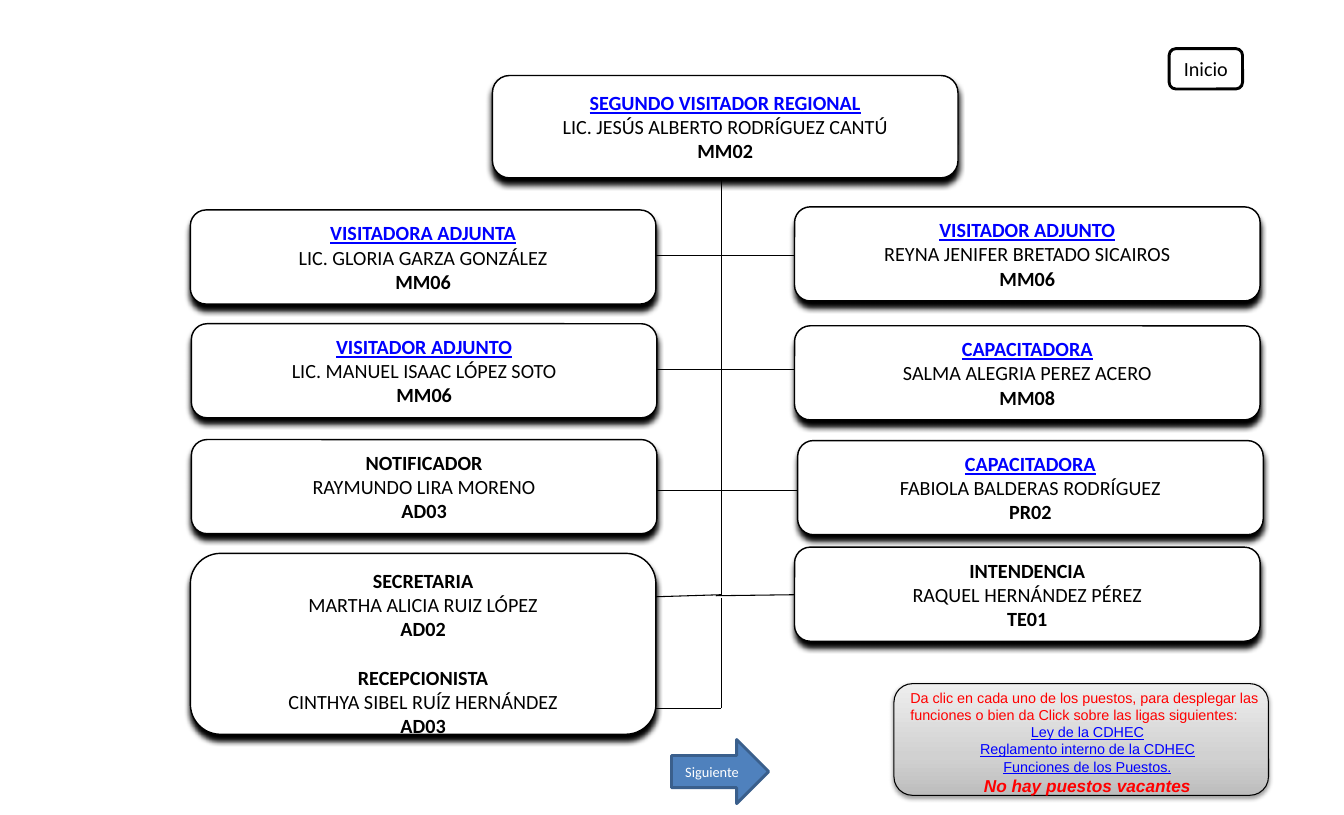
"""Builds the organisation chart slide of a regional office."""
from copy import deepcopy
from lxml.etree import SubElement
from pptx import Presentation
from pptx.dml.color import RGBColor
from pptx.enum.shapes import MSO_CONNECTOR, MSO_SHAPE as Shape
from pptx.enum.text import MSO_ANCHOR as Anchor, MSO_AUTO_SIZE as AutoSize, PP_ALIGN as Align
from pptx.oxml.ns import qn
from pptx.util import Inches, Pt

COLORS = {"black": "000000", "white": "FFFFFF", "link": "0000FF", "red": "FF0000",
          "arrow": "4F81BD", "arrow_edge": "3A5F8C"}
NOTE_STOPS = [(0, "BDBDBD"), (0.35, "D1D1D1"), (1, "EEEEEE")]
COLUMNS = {"left": 1.84, "right": 7.68}
FIRST_ROW, ROW_PITCH = 2.03, 1.11
CARD_WIDTH, CARD_HEIGHT = 4.5, 0.91
TRUNK_X = 6.97
CARD_CORNER = 0.167

HEAD = ("SEGUNDO VISITADOR REGIONAL", "LIC. JESÚS ALBERTO RODRÍGUEZ CANTÚ", "MM02", "link")
POSTS = [
    ("left", 0, 0, 0, ("VISITADORA ADJUNTA", "LIC. GLORIA GARZA GONZÁLEZ", "MM06", "link")),
    ("left", 1, 0.01, -0.01, ("VISITADOR ADJUNTO", "LIC. MANUEL ISAAC LÓPEZ SOTO", "MM06", "link")),
    ("left", 2, 0.01, 0, ("NOTIFICADOR", "RAYMUNDO LIRA MORENO", "AD03", "black")),
    ("right", 0, 0, -0.03, ("VISITADOR ADJUNTO", "REYNA JENIFER BRETADO SICAIROS", "MM06", "link")),
    ("right", 1, 0, 0.01, ("CAPACITADORA", "SALMA ALEGRIA PEREZ ACERO", "MM08", "link")),
    ("right", 2, 0.03, 0.01, ("CAPACITADORA", "FABIOLA BALDERAS RODRÍGUEZ", "PR02", "link")),
    ("right", 3, 0, -0.07, ("INTENDENCIA", "RAQUEL HERNÁNDEZ PÉREZ", "TE01", "black")),
]
OFFICE = [("SECRETARIA", "MARTHA ALICIA RUIZ LÓPEZ", "AD02", "black"),
          ("RECEPCIONISTA", "CINTHYA SIBEL RUÍZ HERNÁNDEZ", "AD03", "black")]
BRANCHES = [(6.02, 2.47, 8.09, 2.47), (6.02, 3.57, 8.09, 3.57), (6.02, 4.74, 8.09, 4.74),
            (6.02, 5.78, TRUNK_X, 5.75), (6.92, 5.76, 7.68, 5.75), (TRUNK_X, 6.85, 5.63, 6.85)]
TRUNK = [(TRUNK_X, 1.08, TRUNK_X, 5.76), (TRUNK_X, 5.78, TRUNK_X, 6.85)]
NOTE = ("Da clic en cada uno de los puestos, para desplegar las funciones "
        "o bien da Click sobre las ligas siguientes:")
NOTE_LINKS = ["Ley de la CDHEC", "Reglamento interno de la CDHEC", "Funciones de los Puestos."]


def rgb(name):
    """Return the named colour."""
    return RGBColor.from_string(COLORS[name])


def add_line(slide, x1, y1, x2, y2):
    """Draw a thin black line without a shadow."""
    line = slide.shapes.add_connector(MSO_CONNECTOR.STRAIGHT, *map(Inches, (x1, y1, x2, y2)))
    line.line.color.rgb = rgb("black")
    line.line.width = Pt(0.75)
    SubElement(line._element.spPr, qn("a:effectLst"))


def add_panel(slide, kind, box, fill, edge, width):
    """Add a filled and outlined shape without a shadow."""
    panel = slide.shapes.add_shape(kind, *map(Inches, box))
    panel.shadow.inherit = False
    panel.fill.solid()
    panel.fill.fore_color.rgb = rgb(fill)
    panel.line.color.rgb = rgb(edge)
    panel.line.width = Pt(width)
    return panel


def add_shadow(panel, alpha, blur, distance):
    """Cast a black shadow straight down."""
    effects = panel._element.spPr.find(qn("a:effectLst"))
    shadow = SubElement(effects, qn("a:outerShdw"), blurRad=str(Pt(blur)),
                        dist=str(Pt(distance)), dir="5400000", rotWithShape="0")
    black = SubElement(shadow, qn("a:srgbClr"), val=COLORS["black"])
    SubElement(black, qn("a:alpha"), val=str(alpha * 1000))


def add_text(frame, text, size, color, font="Calibri", align=Align.CENTER, bold=False,
             italic=False, underline=False):
    """Append one paragraph holding a single run."""
    first = frame.paragraphs[0]
    paragraph = frame.add_paragraph() if first.runs else first
    paragraph.alignment = align
    run = paragraph.add_run()
    run.text = text
    style = run.font
    style.name, style.size, style.color.rgb = font, Pt(size), rgb(color)
    style.bold, style.italic, style.underline = bold, italic, underline
    return paragraph


def add_card(slide, box, posts, anchor=Anchor.MIDDLE, top_inset=0.09):
    """Add a card listing the title, holder and code of each post."""
    card = add_panel(slide, Shape.ROUNDED_RECTANGLE, box, "white", "black", 1)
    card.adjustments[0] = CARD_CORNER
    add_shadow(card, 100, 4, 4)
    frame = card.text_frame
    frame.word_wrap = False
    frame.vertical_anchor = anchor
    frame.margin_left = frame.margin_right = Inches(0.17)
    frame.margin_top, frame.margin_bottom = Inches(top_inset), Inches(0.09)
    for index, (title, holder, code, color) in enumerate(posts):
        heading = add_text(frame, title, 14, color, bold=True, underline=color == "link")
        heading.space_before = Pt(17 if index else 0)
        add_text(frame, holder, 14, "black")
        add_text(frame, code, 14, "black", bold=True)


def add_button(slide, kind, box, label, size, colors, width):
    """Add a navigation button with a centred label."""
    fill, edge, ink = colors
    button = add_panel(slide, kind, box, fill, edge, width)
    button.text_frame.vertical_anchor = Anchor.MIDDLE
    add_text(button.text_frame, label, size, ink)


def add_note(slide):
    """Add the shaded help panel and its text."""
    panel = add_panel(slide, Shape.ROUNDED_RECTANGLE, (8.64, 6.61, 3.62, 1.08),
                      "white", "black", 0.75)
    add_shadow(panel, 38, 3.1, 1.6)
    panel.fill.gradient()
    panel.fill.gradient_angle = 90
    stop_list = panel._element.spPr.find(qn("a:gradFill")).find(qn("a:gsLst"))
    stop_list.append(deepcopy(stop_list[0]))
    for stop, (position, shade) in zip(panel.fill.gradient_stops, NOTE_STOPS):
        stop.position = position
        stop.color.rgb = RGBColor.from_string(shade)

    note = slide.shapes.add_textbox(*map(Inches, (8.7, 6.61, 3.62, 1.14)))
    frame = note.text_frame
    frame.word_wrap = True
    frame.auto_size = AutoSize.SHAPE_TO_FIT_TEXT
    add_text(frame, NOTE, 10, "red", "Arial", Align.LEFT)
    for link in NOTE_LINKS:
        add_text(frame, link, 10, "link", "Arial", underline=True)
    add_text(frame, "No hay puestos vacantes", 12, "red", "Arial", bold=True, italic=True)


def main():
    """Build the slide and save it."""
    deck = Presentation()
    deck.slide_width, deck.slide_height = Inches(12.99), Inches(7.88)
    slide = deck.slides.add_slide(deck.slide_layouts[6])
    for ends in TRUNK + BRANCHES:
        add_line(slide, *ends)
    add_card(slide, (4.76, 0.73, CARD_WIDTH, 0.99), [HEAD])
    for column, row, dx, dy, post in POSTS:
        left, top = COLUMNS[column] + dx, FIRST_ROW + row * ROW_PITCH + dy
        add_card(slide, (left, top, CARD_WIDTH, CARD_HEIGHT), [post])
    add_card(slide, (COLUMNS["left"], 5.35, CARD_WIDTH, 1.75), OFFICE, Anchor.TOP, 0.06)
    add_button(slide, Shape.ROUNDED_RECTANGLE, (11.3, 0.47, 0.71, 0.39), "Inicio", 14,
               ("white", "black", "black"), 2)
    add_note(slide)
    add_button(slide, Shape.RIGHT_ARROW, (6.49, 7.15, 0.94, 0.62), "Siguiente", 10,
               ("arrow", "arrow_edge", "white"), 2)
    deck.save("out.pptx")


if __name__ == "__main__":
    main()
